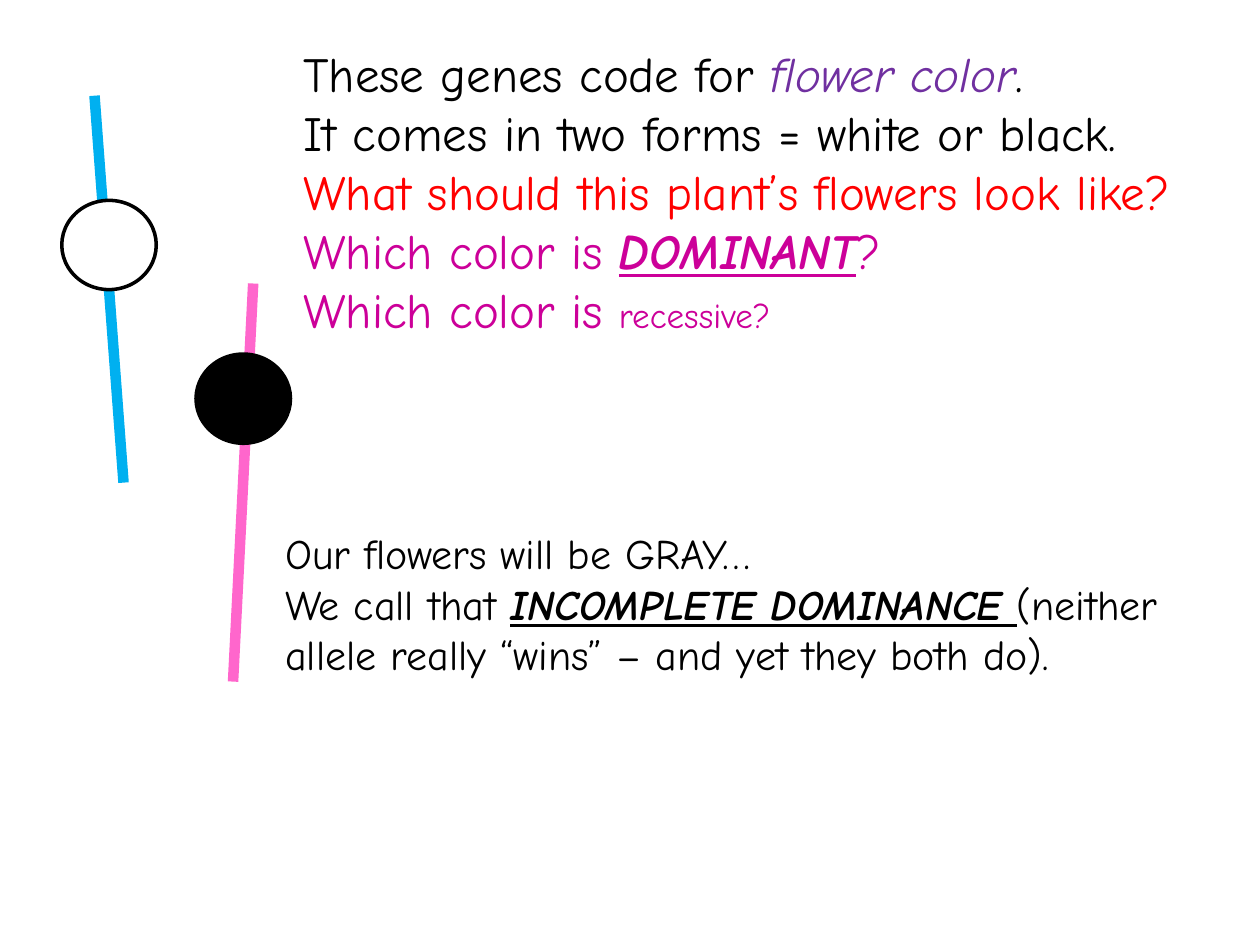
"""Build a slide on flower color genes and incomplete dominance."""
from pptx import Presentation
from pptx.dml import color
from pptx.enum import shapes, text
from pptx.oxml import ns
from pptx.util import Pt
from lxml import etree

BLACK, WHITE, RED = "000000", "FFFFFF", "FF0000"
PURPLE, MAGENTA, BLUE, PINK = "7030A0", "CC0099", "00B0F0", "FF66CC"
STRONG = {"bold": True, "italic": True, "underline": True}


def rgb(value):
    """Return the color for a hex string."""
    return color.RGBColor.from_string(value)


class SlideBuilder:
    """Hold the style and the current slide."""

    font_name = "Comic Neue"
    allele_size = (54, 51)

    def __init__(self, slide):
        """Keep the slide that receives the elements."""
        self.slide = slide

    def chromosome(self, start, end, line_color):
        """Draw a thick straight line."""
        points = [Pt(value) for value in (*start, *end)]
        connector = self.slide.shapes.add_connector(shapes.MSO_CONNECTOR.STRAIGHT, *points)
        connector.line.color.rgb = rgb(line_color)
        connector.line.width = Pt(6)
        etree.SubElement(connector._element.spPr, ns.qn("a:effectLst"))

    def allele(self, left, top, fill_color):
        """Draw an outlined ellipse."""
        box = [Pt(value) for value in (left, top, *self.allele_size)]
        shape = self.slide.shapes.add_shape(shapes.MSO_SHAPE.OVAL, *box)
        shape.shadow.inherit = False
        shape.fill.solid()
        shape.fill.fore_color.rgb = rgb(fill_color)
        shape.line.color.rgb = rgb(BLACK)
        shape.line.width = Pt(2)

    def text_box(self, box, size, paragraphs):
        """Add a wrapped text box from paragraphs of (text, color, format) runs."""
        shape = self.slide.shapes.add_textbox(*[Pt(value) for value in box])
        frame = shape.text_frame
        settings = {"word_wrap": True, "auto_size": text.MSO_AUTO_SIZE.NONE,
                    "vertical_anchor": text.MSO_ANCHOR.TOP}
        for name, value in settings.items():
            setattr(frame, name, value)
        for index, runs in enumerate(paragraphs):
            paragraph = frame.add_paragraph() if index else frame.paragraphs[0]
            for content, text_color, changes in runs:
                run = paragraph.add_run()
                run.text = content
                run.font.color.rgb = rgb(text_color)
                style = {"name": self.font_name, "size": Pt(size), **changes}
                for name, value in style.items():
                    setattr(run.font, name, value)


def main():
    """Create and save the presentation."""
    presentation = Presentation()
    presentation.slide_width, presentation.slide_height = Pt(720), Pt(540)
    builder = SlideBuilder(presentation.slides.add_slide(presentation.slide_layouts[6]))

    builder.chromosome((54, 54.7), (70.6, 275.8), BLUE)
    builder.chromosome((144.7, 162), (133.2, 389.5), PINK)
    builder.allele(35.3, 114.5, WHITE)
    builder.allele(112, 202.3, BLACK)

    builder.text_box((166.3, 21.6, 545.8, 211), 28, [
        [("These genes code for ", BLACK, {}),
         ("flower color", PURPLE, {"italic": True}),
         (".", BLACK, {})],
        [("It comes in two forms = white or black.", BLACK, {})],
        [("What should this plant’s flowers look like?", RED, {})],
        [("Which color is ", MAGENTA, {}),
         ("DOMINANT", MAGENTA, STRONG),
         ("?", MAGENTA, {})],
        [("Which color is ", MAGENTA, {}),
         ("recessive?", MAGENTA, {"size": Pt(20)})],
    ])
    builder.text_box((155.9, 298.1, 555.8, 152.6), 24, [
        [("Our flowers will be GRAY…", BLACK, {})],
        [("We call that ", BLACK, {}),
         ("INCOMPLETE DOMINANCE ", BLACK, STRONG),
         ("(neither allele really “wins” – and yet they both do).", BLACK, {})],
    ])
    presentation.save("out.pptx")


if __name__ == "__main__":
    main()
